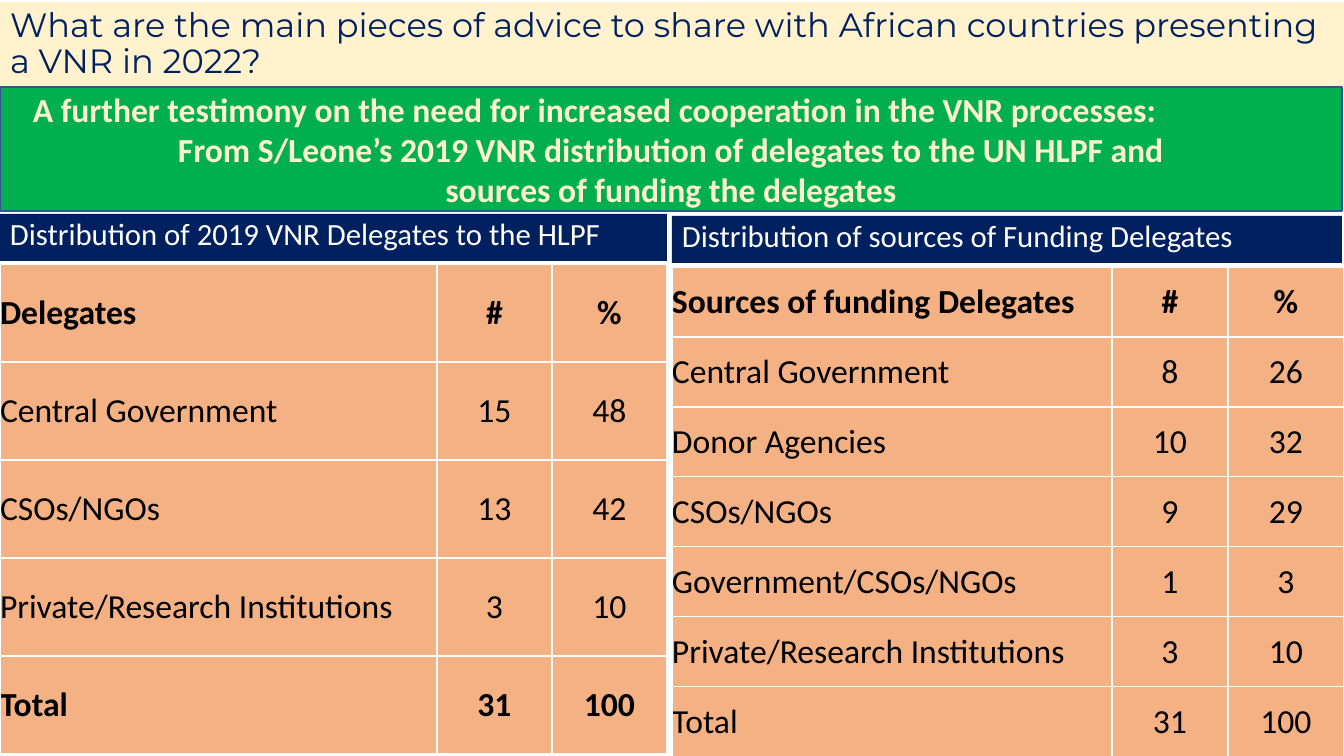
"""Builds the slide on VNR delegates and their sources of funding."""
from lxml import etree
from pptx import Presentation
from pptx.dml.color import RGBColor
from pptx.enum.shapes import MSO_SHAPE
from pptx.enum.text import MSO_ANCHOR, MSO_AUTO_SIZE, PP_ALIGN
from pptx.oxml.ns import qn
from pptx.util import Pt

RECT = MSO_SHAPE.RECTANGLE
TOP, MIDDLE = MSO_ANCHOR.TOP, MSO_ANCHOR.MIDDLE
LEFT, CENTER = PP_ALIGN.LEFT, PP_ALIGN.CENTER
NO_AUTOFIT = MSO_AUTO_SIZE.NONE

COLORS = {
    "cream": "FFF2CC",
    "navy": "002060",
    "green": "00B050",
    "outline": "325491",
    "peach": "F4B183",
    "white": "FFFFFF",
    "black": "000000",
}

TITLE = ("What are the main pieces of advice to share with African countries "
         "presenting a VNR in 2022?")
BANNER = [
    "A further testimony on the need for increased cooperation in the VNR processes:",
    "From S/Leone’s 2019 VNR distribution of delegates to the UN HLPF and",
    "sources of funding the delegates",
]
DELEGATES = [
    ("Delegates", "#", "%"),
    ("Central Government", "15", "48"),
    ("CSOs/NGOs", "13", "42"),
    ("Private/Research Institutions", "3", "10"),
    ("Total", "31", "100"),
]
FUNDING = [
    ("Sources of funding Delegates", "#", "%"),
    ("Central Government", "8", "26"),
    ("Donor Agencies", "10", "32"),
    ("CSOs/NGOs", "9", "29"),
    ("Government/CSOs/NGOs", "1", "3"),
    ("Private/Research Institutions", "3", "10"),
    ("Total", "31", "100"),
]


def px(n):
    return round(n * 914400 / 100.8)


def color(name):
    return RGBColor.from_string(COLORS[name])


def paint(item, name):
    item.fill.solid()
    item.fill.fore_color.rgb = color(name)


def style(p, size, name, font="Calibri", bold=False, align=LEFT, spacing=1.0):
    p.alignment = align
    p.line_spacing = spacing
    for r in p.runs:
        r.font.size = Pt(size)
        r.font.name = font
        r.font.bold = bold
        r.font.color.rgb = color(name)


def add_title(s):
    title = s.shapes.title
    title.left, title.top, title.width, title.height = px(0), px(2), px(1344), px(85)
    paint(title, "cream")
    tf = title.text_frame
    tf.text = TITLE
    tf.auto_size = NO_AUTOFIT
    tf.vertical_anchor = MIDDLE
    style(tf.paragraphs[0], 24, "navy", font="Montserrat", spacing=0.9)


def add_box(s, x, y, w, h, fill, lines, anchor):
    sp = s.shapes.add_shape(RECT, px(x), px(y), px(w), px(h))
    sp.shadow.inherit = False
    paint(sp, fill)
    sp.line.fill.background()
    tf = sp.text_frame
    tf.word_wrap = True
    tf.vertical_anchor = anchor
    tf.text = "\n".join(lines)
    return sp


def add_banner(s):
    sp = add_box(s, 0, 87, 1342, 124, "green", BANNER, MIDDLE)
    sp.line.color.rgb = color("outline")
    sp.line.width = Pt(1)
    first, *rest = sp.text_frame.paragraphs
    style(first, 24, "cream", bold=True)
    first._p.get_or_add_pPr().set("marL", str(px(23)))
    for p in rest:
        style(p, 24, "cream", bold=True, align=CENTER)


def add_heading(s, x, y, w, text):
    sp = add_box(s, x, y, w, 47, "navy", [text], TOP)
    style(sp.text_frame.paragraphs[0], 22, "white", spacing=0.9)


def add_borders(cell):
    tcPr = cell._tc.get_or_add_tcPr()
    for i, side in enumerate(("lnL", "lnR", "lnT", "lnB")):
        ln = etree.Element(qn(f"a:{side}"), w=str(Pt(1)))
        fill = etree.SubElement(ln, qn("a:solidFill"))
        etree.SubElement(fill, qn("a:srgbClr"), val=COLORS["white"])
        tcPr.insert(i, ln)


def add_grid(s, x, y, col_widths, row_height, rows, bold_rows):
    frame = s.shapes.add_table(len(rows), len(col_widths), px(x), px(y),
                               px(sum(col_widths)), px(row_height * len(rows)))
    table = frame.table
    for col, width in zip(table.columns, col_widths):
        col.width = px(width)
    for i, values in enumerate(rows):
        table.rows[i].height = px(row_height)
        for j, value in enumerate(values):
            cell = table.cell(i, j)
            cell.text = value
            cell.vertical_anchor = MIDDLE
            cell.margin_left = cell.margin_right = 0
            cell.margin_top = cell.margin_bottom = 0
            paint(cell, "peach")
            add_borders(cell)
            style(cell.text_frame.paragraphs[0], 24, "black",
                  bold=i in bold_rows, align=CENTER if j else LEFT)


def main():
    prs = Presentation()
    prs.slide_width, prs.slide_height = px(1344), px(756)
    s = prs.slides.add_slide(prs.slide_layouts[5])
    add_title(s)
    add_heading(s, 0, 214, 667, "Distribution of 2019 VNR Delegates to the HLPF")
    add_banner(s)
    add_heading(s, 672, 216, 670, "Distribution of sources of Funding Delegates")
    add_grid(s, 0, 264, (437, 115, 115), 98, DELEGATES, (0, len(DELEGATES) - 1))
    add_grid(s, 672, 267, (440, 116, 116), 70, FUNDING, (0,))
    prs.save("out.pptx")


if __name__ == "__main__":
    main()
